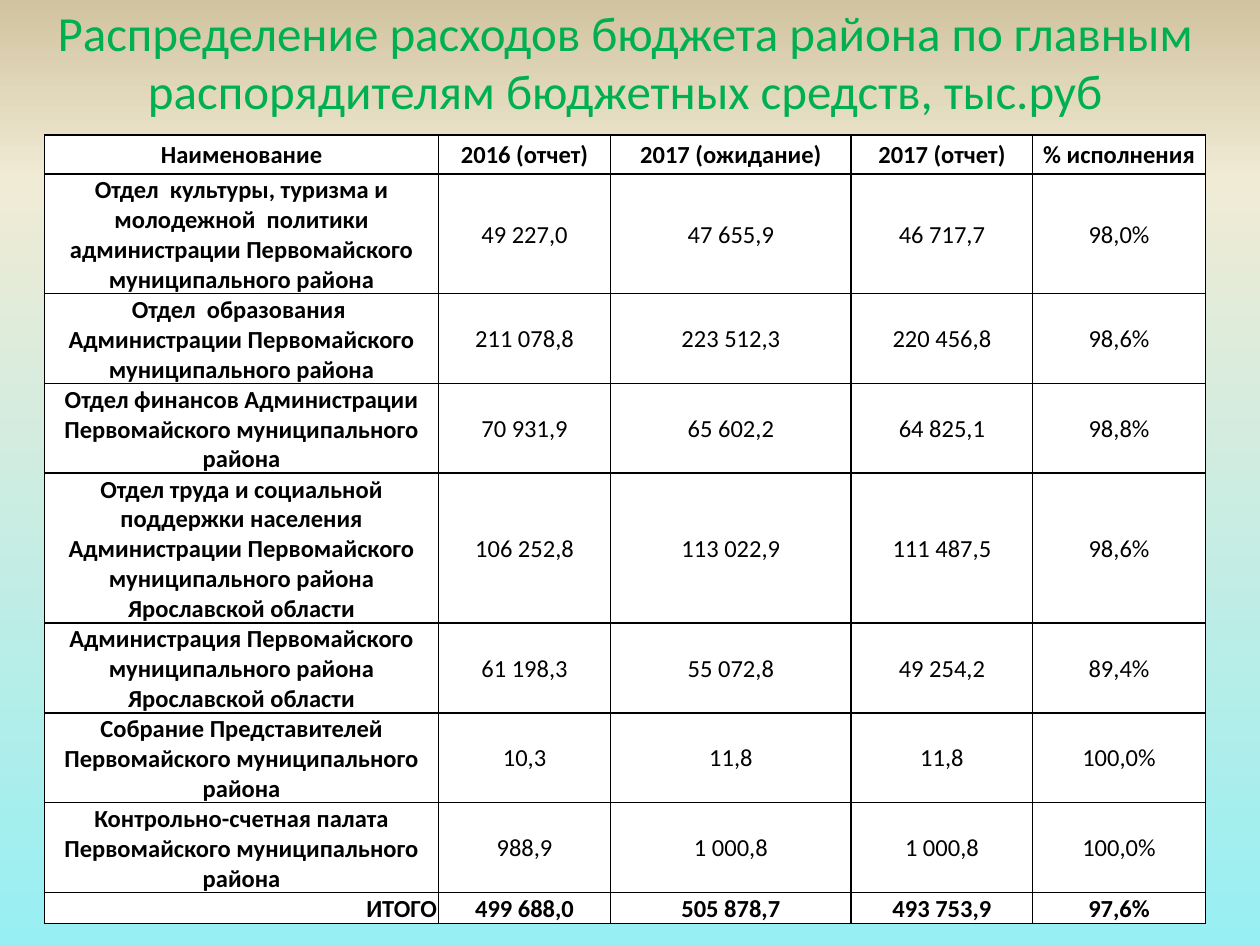
from lxml import etree
from pptx import Presentation
from pptx.dml.color import RGBColor
from pptx.enum.text import MSO_ANCHOR, PP_ALIGN
from pptx.oxml.ns import qn
from pptx.util import Cm, Pt

CENTER, RIGHT = PP_ALIGN.CENTER, PP_ALIGN.RIGHT
TOP, MIDDLE, BOTTOM = MSO_ANCHOR.TOP, MSO_ANCHOR.MIDDLE, MSO_ANCHOR.BOTTOM

BLACK = RGBColor(0x00, 0x00, 0x00)
WHITE = RGBColor(0xFF, 0xFF, 0xFF)
GREEN = RGBColor(0x00, 0xB0, 0x50)
AQUA = RGBColor(0x97, 0xEF, 0xF3)
CREAM = RGBColor(0xF0, 0xEB, 0xD5)
SAND = RGBColor(0xD1, 0xC3, 0x9F)

FONT = "Calibri"
BACKGROUND_STOPS = ((0, AQUA), (81, CREAM), (100, SAND))
BORDER_TAGS = ("a:lnL", "a:lnR", "a:lnT", "a:lnB")

TITLE = "Распределение расходов бюджета района по главным распорядителям бюджетных средств, тыс.руб"
HEADER = ("Наименование", "2016 (отчет)", "2017 (ожидание)", "2017 (отчет)", "% исполнения")
DEPARTMENTS = (
    ("Отдел  культуры, туризма и молодежной  политики администрации Первомайского муниципального района",
     "49 227,0", "47 655,9", "46 717,7", "98,0%"),
    ("Отдел  образования  Администрации Первомайского муниципального района",
     "211 078,8", "223 512,3", "220 456,8", "98,6%"),
    ("Отдел финансов Администрации Первомайского муниципального района",
     "70 931,9", "65 602,2", "64 825,1", "98,8%"),
    ("Отдел труда и социальной поддержки населения Администрации Первомайского муниципального района "
     "Ярославской области",
     "106 252,8", "113 022,9", "111 487,5", "98,6%"),
    ("Администрация Первомайского муниципального района Ярославской области",
     "61 198,3", "55 072,8", "49 254,2", "89,4%"),
    ("Собрание Представителей Первомайского муниципального района",
     "10,3", "11,8", "11,8", "100,0%"),
    ("Контрольно-счетная палата Первомайского муниципального района",
     "988,9", "1 000,8", "1 000,8", "100,0%"),
)
TOTAL = ("ИТОГО", "499 688,0", "505 878,7", "493 753,9", "97,6%")
TOTAL_ANCHORS = (TOP, TOP, BOTTOM, MIDDLE, MIDDLE)
COLUMN_WIDTHS = (7.94, 3.47, 4.85, 3.66, 3.48)
ROW_HEIGHTS = (0.79, 2.41, 1.81, 1.81, 3.02, 1.81, 1.81, 1.81, 0.6)


def write_text(text_frame, text, size=14, color=BLACK, bold=False, align=CENTER):
    paragraph = text_frame.paragraphs[0]
    paragraph.alignment = align
    run = paragraph.add_run()
    run.text = text
    run.font.name = FONT
    run.font.size = Pt(size)
    run.font.bold = bold
    run.font.color.rgb = color


def paint_background(slide):
    fill = slide.background.fill
    fill.gradient()
    fill.gradient_angle = 90
    stops = slide.element.find(".//" + qn("a:gsLst"))
    for stop in list(stops):
        stops.remove(stop)
    for position, color in BACKGROUND_STOPS:
        stop = etree.SubElement(stops, qn("a:gs"), pos=str(position * 1000))
        etree.SubElement(stop, qn("a:srgbClr"), val=str(color))


def add_title(slide, left, top, width, height):
    shape = slide.shapes.add_textbox(left, top, width, height)
    shape.text_frame.word_wrap = True
    shape.text_frame.vertical_anchor = MIDDLE
    write_text(shape.text_frame, TITLE, size=28, color=GREEN)


def add_borders(cell):
    properties = cell._tc.get_or_add_tcPr()
    for position, tag in enumerate(BORDER_TAGS):
        line = etree.Element(qn(tag), w=str(Pt(1)))
        fill = etree.SubElement(line, qn("a:solidFill"))
        etree.SubElement(fill, qn("a:srgbClr"), val=str(BLACK))
        properties.insert(position, line)


def format_cell(cell, anchor):
    cell.margin_left = cell.margin_right = cell.margin_top = Cm(0.03)
    cell.margin_bottom = 0
    cell.vertical_anchor = anchor
    cell.fill.solid()
    cell.fill.fore_color.rgb = WHITE
    add_borders(cell)


def add_budget_table(slide, left, top, width, height):
    records = (HEADER, *DEPARTMENTS, TOTAL)
    last_row = len(records) - 1
    table = slide.shapes.add_table(len(records), len(HEADER), left, top, width, height).table
    table.first_row = False
    table.horz_banding = False
    for column, column_width in zip(table.columns, COLUMN_WIDTHS):
        column.width = Cm(column_width)
    for row, row_height in zip(table.rows, ROW_HEIGHTS):
        row.height = Cm(row_height)
    for row_index, record in enumerate(records):
        for column_index, text in enumerate(record):
            is_name = column_index == 0
            is_total = row_index == last_row
            if is_total:
                anchor = TOTAL_ANCHORS[column_index]
            else:
                anchor = TOP if is_name and row_index > 1 else MIDDLE
            cell = table.cell(row_index, column_index)
            format_cell(cell, anchor)
            write_text(cell.text_frame, text,
                       bold=is_name or is_total or row_index == 0,
                       align=RIGHT if is_name and is_total else CENTER)


def main():
    presentation = Presentation()
    presentation.slide_width = Cm(25.4)
    presentation.slide_height = Cm(19.05)
    slide = presentation.slides.add_slide(presentation.slide_layouts[6])
    paint_background(slide)
    add_title(slide, Cm(0.5), Cm(0.13), Cm(24.2), Cm(2.2))
    add_budget_table(slide, Cm(0.9), Cm(2.72), Cm(sum(COLUMN_WIDTHS)), Cm(sum(ROW_HEIGHTS)))
    presentation.save("out.pptx")


if __name__ == "__main__":
    main()
